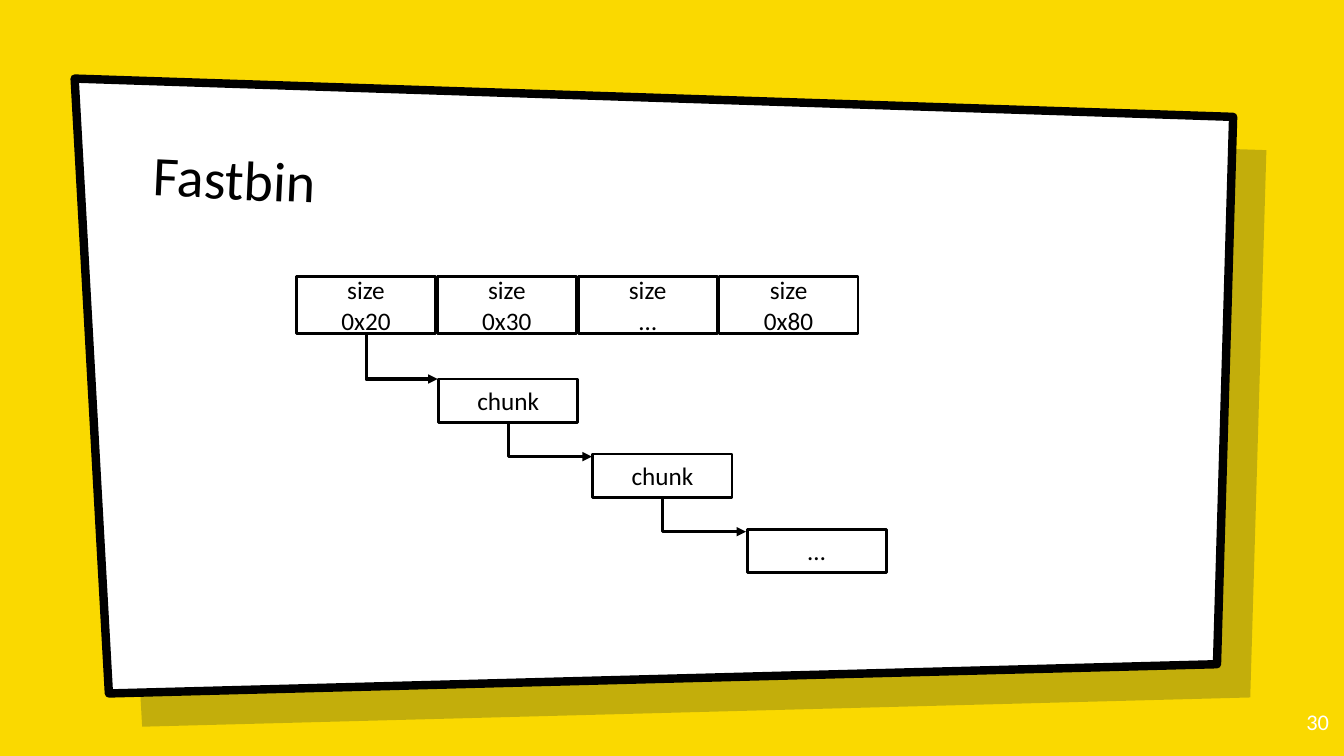
"""Build the Fastbin slide: size buckets leading to a staircase of linked chunks."""
from dataclasses import dataclass

from lxml.etree import SubElement
from pptx import Presentation
from pptx.dml.color import RGBColor
from pptx.enum.shapes import MSO_CONNECTOR, MSO_SHAPE
from pptx.enum.text import MSO_ANCHOR, PP_ALIGN
from pptx.oxml.ns import qn
from pptx.util import Inches, Pt

TITLE = "Fastbin"
PAGE_NUMBER = "30"
BUCKETS = ["0x20", "0x30", "…", "0x80"]
CHUNKS = ["chunk", "chunk", "…"]

SLIDE_SIZE = (13.33, 7.5)
PANEL = [(0.74, 0.78), (12.23, 1.16), (12.07, 6.59), (1.08, 6.88)]
SHADOW_OFFSET = 0.33
TITLE_AREA = (1.42, 1.28, 10.25, 1.11)
TITLE_ANGLE = 2.7
NUMBER_AREA = (12.48, 6.93, 0.8, 0.57)
BOX_WIDTH = 1.38
BUCKET_START, BUCKET_PITCH, BUCKET_HEIGHT = (2.94, 2.74), 1.397, 0.57
CHUNK_START, CHUNK_STEP, CHUNK_HEIGHT = (4.35, 3.76), (1.53, 0.745), 0.43
ARROW_DROPS = [0.45, 0.34, 0.34]
ARROW_GAP = 0.01


@dataclass(frozen=True)
class Theme:
    font: str = "Calibri"
    yellow: RGBColor = RGBColor(0xFA, 0xD9, 0x00)
    shade: RGBColor = RGBColor(0x00, 0x19, 0x36)
    shade_alpha: int = 22
    white: RGBColor = RGBColor(0xFF, 0xFF, 0xFF)
    black: RGBColor = RGBColor(0, 0, 0)
    title: int = 40
    label: int = 18
    number: int = 16
    panel_line: float = 6
    box_line: float = 2
    arrow_line: float = 2.25


THEME = Theme()


def set_line(shape, width):
    shape.line.color.rgb = THEME.black
    shape.line.width = Pt(width)


def write(frame, lines, size, color, align):
    for index, line in enumerate(lines):
        para = frame.add_paragraph() if index else frame.paragraphs[0]
        para.text = line
        para.alignment = align
        para.font.name = THEME.font
        para.font.size = Pt(size)
        para.font.color.rgb = color


def add_panel(page, offset, color):
    corners = [(Inches(x + offset), Inches(y + offset)) for x, y in PANEL]
    builder = page.shapes.build_freeform(*corners[0], scale=1.0)
    builder.add_line_segments(corners[1:], close=True)
    panel = builder.convert_to_shape()
    panel.shadow.inherit = False
    panel.fill.solid()
    panel.fill.fore_color.rgb = color
    return panel


def add_text(page, area, text, size, color, align, anchor):
    box = page.shapes.add_textbox(*map(Inches, area))
    frame = box.text_frame
    frame.word_wrap = True
    frame.vertical_anchor = anchor
    frame.margin_left = frame.margin_right = Inches(0.1)
    frame.margin_top = frame.margin_bottom = Inches(0.1)
    write(frame, [text], size, color, align)
    return box


def add_box(page, left, top, height, lines):
    area = map(Inches, (left, top, BOX_WIDTH, height))
    box = page.shapes.add_shape(MSO_SHAPE.RECTANGLE, *area)
    box.shadow.inherit = False
    box.fill.solid()
    box.fill.fore_color.rgb = THEME.white
    set_line(box, THEME.box_line)
    box.text_frame.vertical_anchor = MSO_ANCHOR.MIDDLE
    write(box.text_frame, lines, THEME.label, THEME.black, PP_ALIGN.CENTER)


def add_arrow(page, start, run, drop):
    """Draw a one-bend arrow, down and then right, as a turned and mirrored elbow."""
    left = start[0] + (run - drop) / 2
    top = start[1] + (drop - run) / 2
    ends = map(Inches, (left, top, left + drop, top + run))
    arrow = page.shapes.add_connector(MSO_CONNECTOR.ELBOW, *ends)
    set_line(arrow, THEME.arrow_line)
    properties = arrow._element.spPr
    properties.find(qn("a:prstGeom")).set("prst", "bentConnector2")
    transform = properties.find(qn("a:xfrm"))
    transform.set("rot", str(270 * 60000))
    transform.set("flipH", "1")
    SubElement(properties.find(qn("a:ln")), qn("a:tailEnd"), type="triangle")
    SubElement(properties, qn("a:effectLst"))


def main():
    deck = Presentation()
    deck.slide_width, deck.slide_height = map(Inches, SLIDE_SIZE)
    page = deck.slides.add_slide(deck.slide_layouts[6])
    page.background.fill.solid()
    page.background.fill.fore_color.rgb = THEME.yellow

    shade = add_panel(page, SHADOW_OFFSET, THEME.shade)
    shade.line.fill.background()
    color = shade._element.spPr.find(qn("a:solidFill"))[0]
    SubElement(color, qn("a:alpha"), val=str(THEME.shade_alpha * 1000))
    set_line(add_panel(page, 0, THEME.white), THEME.panel_line)

    title = add_text(page, TITLE_AREA, TITLE, THEME.title, THEME.black,
                     PP_ALIGN.LEFT, MSO_ANCHOR.BOTTOM)
    title.rotation = TITLE_ANGLE
    add_text(page, NUMBER_AREA, PAGE_NUMBER, THEME.number, THEME.white,
             PP_ALIGN.RIGHT, MSO_ANCHOR.TOP)

    left, top = BUCKET_START
    for column, size in enumerate(BUCKETS):
        add_box(page, left + column * BUCKET_PITCH, top, BUCKET_HEIGHT, ["size", size])

    source = (left + BOX_WIDTH / 2, top + BUCKET_HEIGHT)
    for step, (label, drop) in enumerate(zip(CHUNKS, ARROW_DROPS)):
        left, top = (first + step * gap for first, gap in zip(CHUNK_START, CHUNK_STEP))
        add_box(page, left, top, CHUNK_HEIGHT, [label])
        add_arrow(page, source, left - ARROW_GAP - source[0], drop)
        source = (left + BOX_WIDTH / 2, top + CHUNK_HEIGHT)

    deck.save("out.pptx")


if __name__ == "__main__":
    main()
